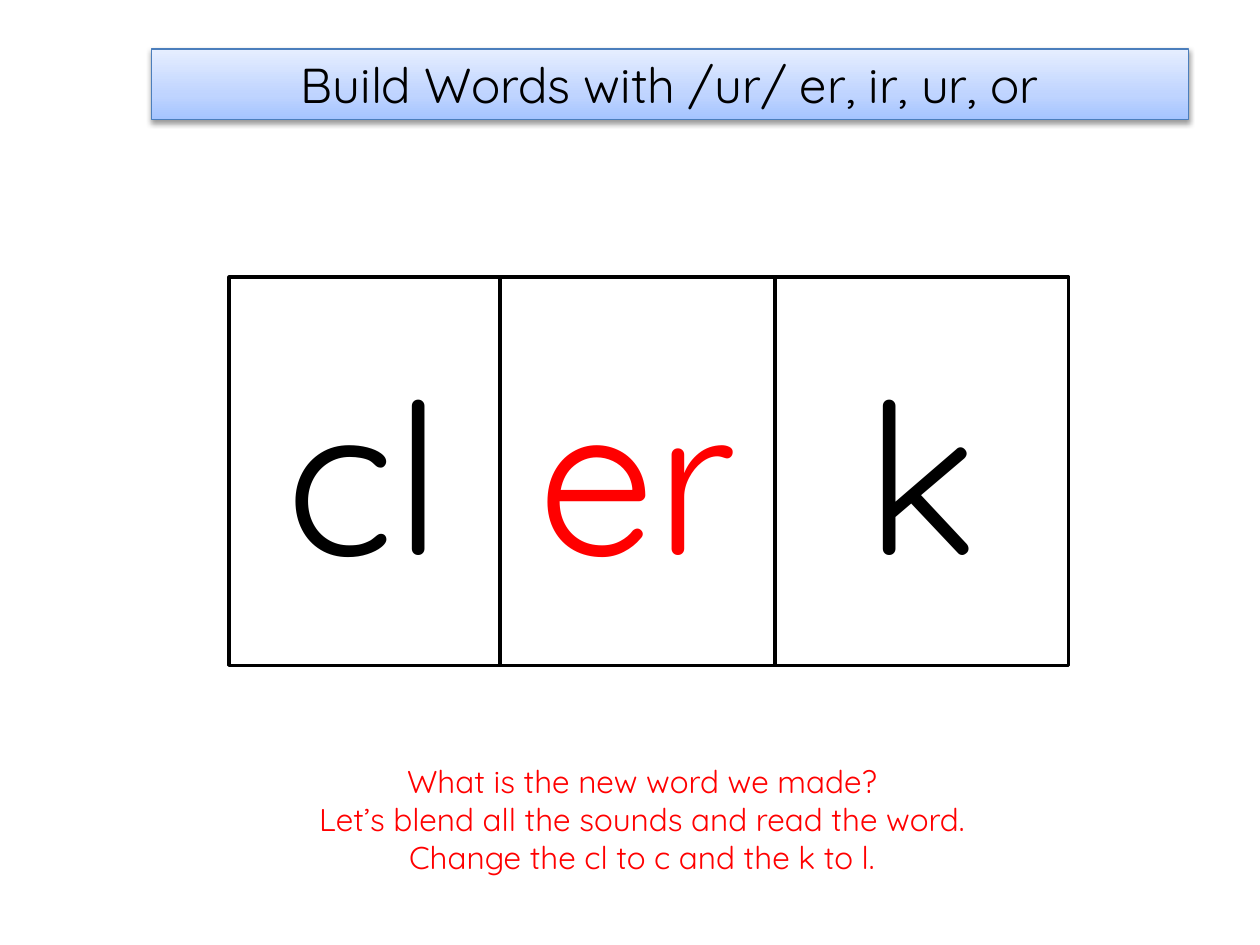
import dataclasses

import lxml.etree
import pptx
import pptx.dml.color
import pptx.enum.shapes
import pptx.enum.text
import pptx.util

Pt = pptx.util.Pt
NS = "http://schemas.openxmlformats.org/drawingml/2006/main"


@dataclasses.dataclass(frozen=True)
class Theme:
    font: str = "Quicksand"
    black: str = "000000"
    white: str = "FFFFFF"
    red: str = "FF0000"
    banner_line: str = "4B7EBC"
    banner_stops: tuple = ((0, "A4C4FF"), (35, "BFD4FF"), (100, "E6EEFF"))
    title_size: int = 28
    card_size: int = 120
    prompt_size: int = 18


class SlideBuilder:
    def __init__(self, prs, theme):
        self.theme = theme
        self.slide = prs.slides.add_slide(prs.slide_layouts[5])

    def rgb(self, color):
        return pptx.dml.color.RGBColor.from_string(color)

    def outline(self, sp, color, width):
        sp.line.color.rgb = self.rgb(color)
        sp.line.width = Pt(width)

    def set_text(self, sp, text, size, color, anchor):
        tf = sp.text_frame
        tf.text = text
        tf.word_wrap = True
        tf.auto_size = pptx.enum.text.MSO_AUTO_SIZE.NONE
        tf.vertical_anchor = anchor
        for p in tf.paragraphs:
            p.alignment = pptx.enum.text.PP_ALIGN.CENTER
            for r in p.runs:
                r.font.name = self.theme.font
                r.font.size = Pt(size)
                r.font.color.rgb = self.rgb(color)

    def banner(self, text, left, top, width, height):
        sp = self.slide.shapes.title
        sp.left, sp.top, sp.width, sp.height = map(Pt, (left, top, width, height))
        self.set_text(sp, text, self.theme.title_size, self.theme.black,
                      pptx.enum.text.MSO_ANCHOR.MIDDLE)
        # Three-stop gradient running upwards, outline, then soft shadow
        stops = "".join(
            f'<a:gs pos="{pos * 1000}"><a:srgbClr val="{color}"/></a:gs>'
            for pos, color in self.theme.banner_stops)
        spPr = sp.element.spPr
        spPr.append(lxml.etree.fromstring(
            f'<a:gradFill xmlns:a="{NS}" rotWithShape="1"><a:gsLst>{stops}</a:gsLst>'
            '<a:lin ang="16200000" scaled="0"/></a:gradFill>'))
        self.outline(sp, self.theme.banner_line, 0.75)
        spPr.append(lxml.etree.fromstring(
            f'<a:effectLst xmlns:a="{NS}"><a:outerShdw blurRad="{int(Pt(3.1))}" '
            f'dist="{int(Pt(1.6))}" dir="5400000" rotWithShape="0">'
            f'<a:srgbClr val="{self.theme.black}"><a:alpha val="38000"/></a:srgbClr>'
            '</a:outerShdw></a:effectLst>'))

    def card(self, text, color, left, top, width, height):
        sp = self.slide.shapes.add_shape(
            pptx.enum.shapes.MSO_SHAPE.RECTANGLE,
            Pt(left), Pt(top), Pt(width), Pt(height))
        sp.shadow.inherit = False
        sp.fill.solid()
        sp.fill.fore_color.rgb = self.rgb(self.theme.white)
        self.outline(sp, self.theme.black, 2)
        self.set_text(sp, text, self.theme.card_size, color,
                      pptx.enum.text.MSO_ANCHOR.MIDDLE)

    def prompt(self, lines, left, top, width, height):
        sp = self.slide.shapes.add_textbox(Pt(left), Pt(top), Pt(width), Pt(height))
        self.set_text(sp, "\n".join(lines), self.theme.prompt_size, self.theme.red,
                      pptx.enum.text.MSO_ANCHOR.TOP)


def main():
    prs = pptx.Presentation()
    prs.slide_width, prs.slide_height = Pt(720), Pt(540)
    theme = Theme()
    s = SlideBuilder(prs, theme)

    # Title banner
    s.banner("Build Words with /ur/ er, ir, ur, or", 86.4, 28, 592.6, 40.3)

    # Sound cards, side by side
    left = 131
    for text, color, width in (("cl", theme.black, 154.8),
                               ("er", theme.red, 157),
                               ("k", theme.black, 167.8)):
        s.card(text, color, left, 158.4, width, 221.8)
        left += width

    # Questions for the class
    s.prompt(("What is the new word we made?",
              "Let’s blend all the sounds and read the word.",
              "Change the cl to c and the k to l."), 116, 432, 501.8, 72.7)

    prs.save("out.pptx")


if __name__ == "__main__":
    main()
